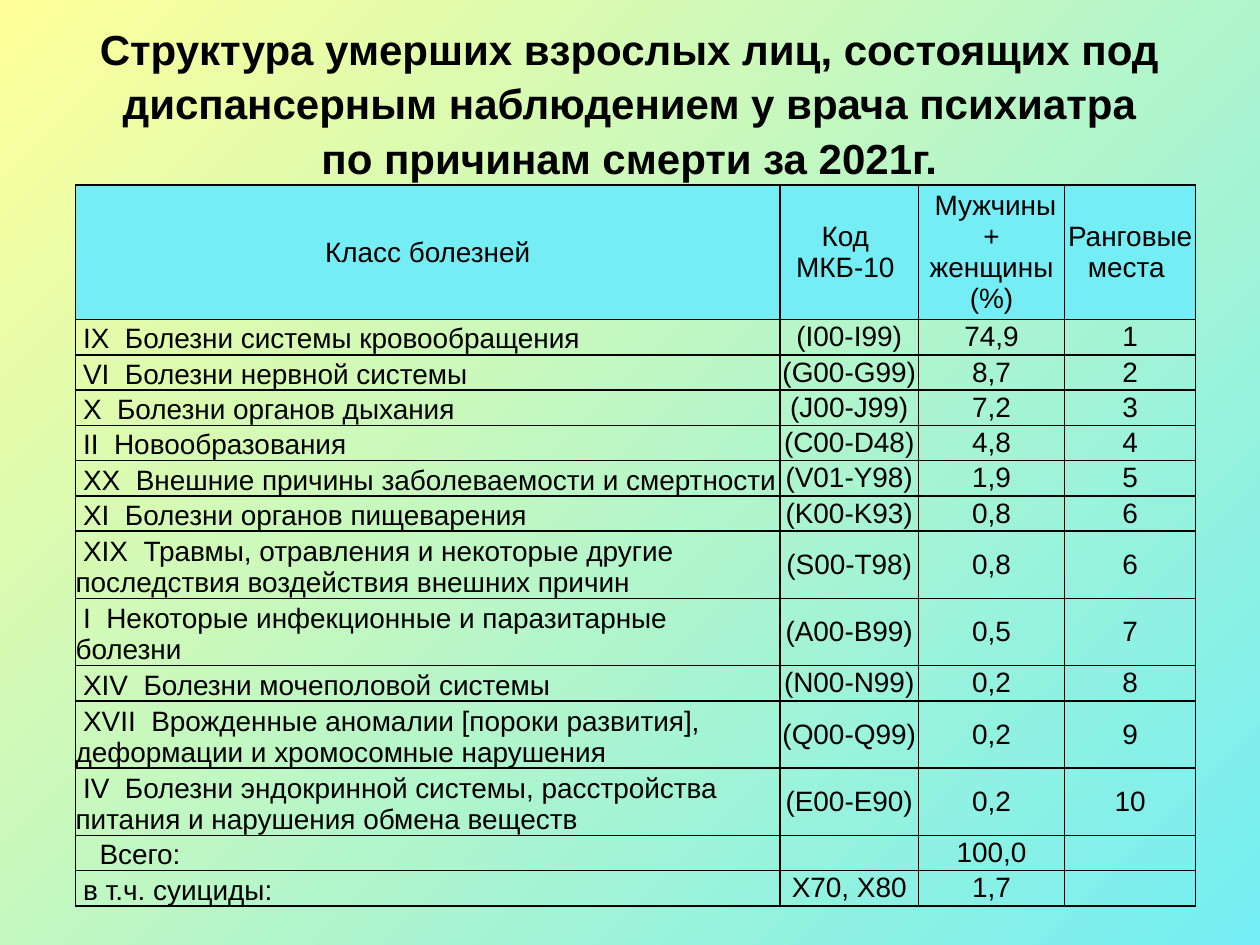
from lxml import etree
from pptx import Presentation, util as u
from pptx.dml.color import RGBColor
from pptx.enum import text
from pptx.oxml.ns import qn


def color(value):
    return RGBColor.from_string(value)


def write(frame, content, size=16, bold=False, align=text.PP_ALIGN.CENTER, indent=0, spacing=None):
    frame.text = content
    frame.word_wrap = True
    for paragraph in frame.paragraphs:
        paragraph.alignment = align
        paragraph.line_spacing = spacing
        paragraph.font.size = u.Pt(size)
        if indent:
            properties = paragraph._p.get_or_add_pPr()
            properties.set("marL", "0")
            properties.set("indent", str(u.Inches(indent)))
        for run in paragraph.runs:
            run.font.name = "Arial"
            run.font.size = u.Pt(size)
            run.font.bold = bold
            run.font.color.rgb = color("000000")


header = ["Класс болезней", "Код \nМКБ-10 ", " Мужчины + женщины (%)", "Ранговые места "]
diseases = [
    ["IX  Болезни системы кровообращения", "(I00-I99)", "74,9", "1"],
    ["VI  Болезни нервной системы", "(G00-G99)", "8,7", "2"],
    ["X  Болезни органов дыхания", "(J00-J99)", "7,2", "3"],
    ["II  Новообразования", "(C00-D48)", "4,8", "4"],
    ["XX  Внешние причины заболеваемости и смертности", "(V01-Y98)", "1,9", "5"],
    ["XI  Болезни органов пищеварения", "(K00-K93)", "0,8", "6"],
    ["XIX  Травмы, отравления и некоторые другие последствия воздействия внешних причин",
     "(S00-T98)", "0,8", "6"],
    ["I  Некоторые инфекционные и паразитарные болезни", "(A00-B99)", "0,5", "7"],
    ["XIV  Болезни мочеполовой системы", "(N00-N99)", "0,2", "8"],
    ["XVII  Врожденные аномалии [пороки развития], деформации и хромосомные нарушения",
     "(Q00-Q99)", "0,2", "9"],
    ["IV  Болезни эндокринной системы, расстройства питания и нарушения обмена веществ",
     "(E00-E90)", "0,2", "10"],
    ["Всего:", "", "100,0", ""],
    ["в т.ч. суициды:", "X70, X80", "1,7", ""],
]
rows = [header] + diseases
column_widths = [5.59, 1.1, 1.16, 1.04]
row_heights = [0.99] + [0.28] * 6 + [0.52, 0.5, 0.28, 0.52, 0.52, 0.28, 0.28]

deck = Presentation()
deck.slide_width, deck.slide_height = u.Inches(10), u.Inches(7.5)
slide = deck.slides.add_slide(deck.slide_layouts[6])

backdrop = slide.background.fill
backdrop.gradient()
backdrop.gradient_angle = 315
for stop, shade, position in zip(backdrop.gradient_stops, ["FFFF99", "74EEF4"], [0, 1]):
    stop.color.rgb = color(shade)
    stop.position = position

heading = slide.shapes.add_textbox(u.Inches(0.5), u.Inches(0.13), u.Inches(8.99), u.Inches(1.34))
heading.text_frame.vertical_anchor = text.MSO_ANCHOR.MIDDLE
write(
    heading.text_frame,
    "Структура умерших взрослых лиц, состоящих под диспансерным наблюдением "
    "у врача психиатра\vпо причинам смерти за 2021г.",
    size=24, bold=True, spacing=1.08,
)

mortality = slide.shapes.add_table(
    len(rows), len(header), u.Inches(0.6), u.Inches(1.47),
    u.Inches(sum(column_widths)), u.Inches(sum(row_heights)),
).table
mortality.horz_banding = False
for column, width in zip(mortality.columns, column_widths):
    column.width = u.Inches(width)

for r, (values, height) in enumerate(zip(rows, row_heights)):
    mortality.rows[r].height = u.Inches(height)
    for c, value in enumerate(values):
        cell = mortality.cell(r, c)
        cell.margin_left = cell.margin_right = cell.margin_top = cell.margin_bottom = 0
        cell.vertical_anchor = text.MSO_ANCHOR.MIDDLE
        if r and c == 0:
            cell.vertical_anchor = text.MSO_ANCHOR.BOTTOM
            write(cell.text_frame, value, align=text.PP_ALIGN.LEFT,
                  indent=0.19 if value == "Всего:" else 0.06)
        else:
            write(cell.text_frame, value)
        borders = cell._tc.get_or_add_tcPr()
        for side in ["a:lnL", "a:lnR", "a:lnT", "a:lnB"]:
            line = etree.SubElement(borders, qn(side), w=str(u.Pt(1)))
            ink = etree.SubElement(line, qn("a:solidFill"))
            etree.SubElement(ink, qn("a:srgbClr"), val="000000")
        if r:
            cell.fill.background()
        else:
            cell.fill.solid()
            cell.fill.fore_color.rgb = color("74EEF4")

deck.save("out.pptx")
